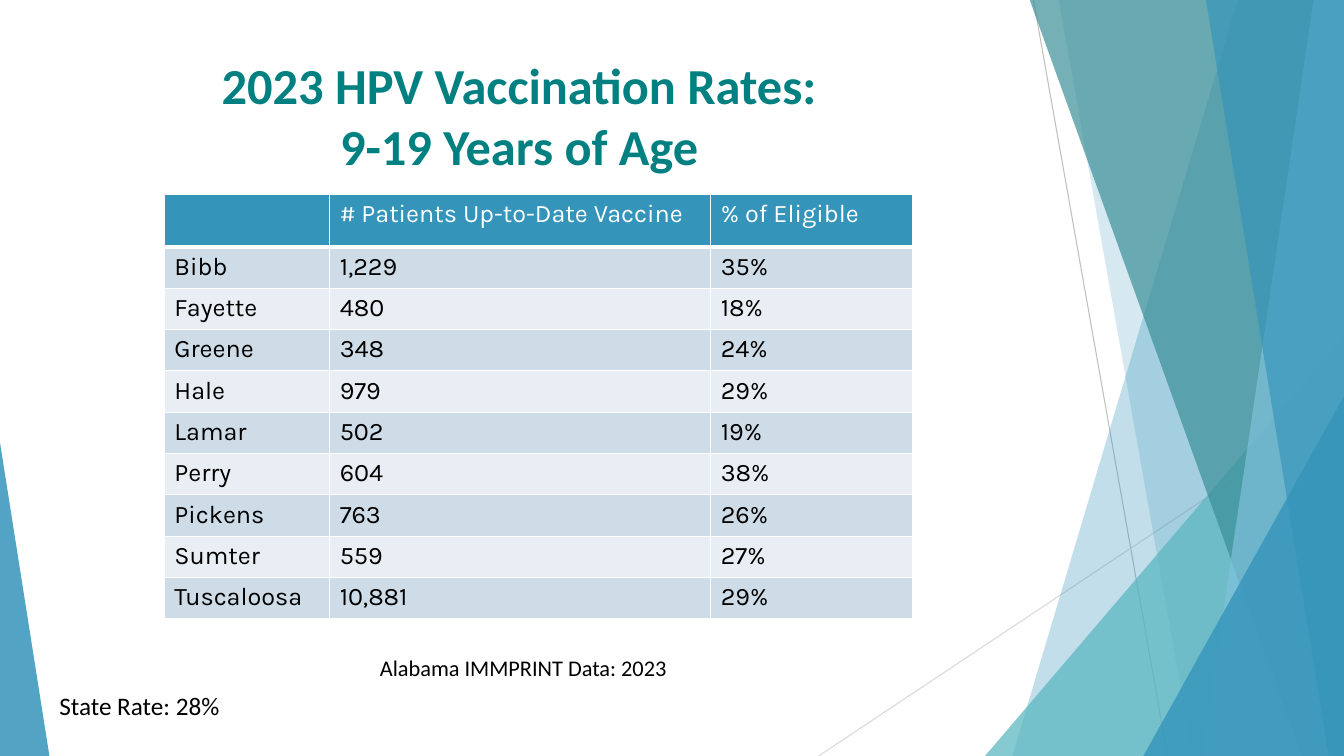
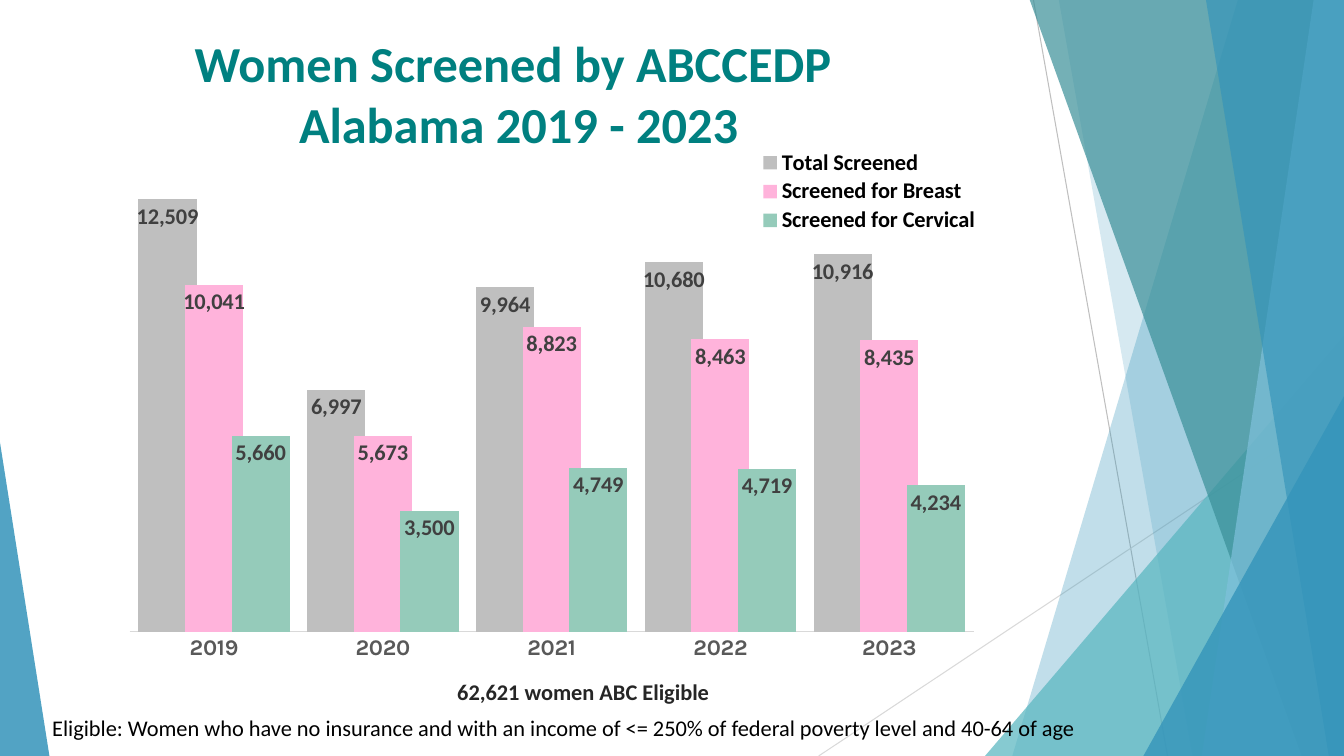
import pptx
import pptx.chart.data
import pptx.dml.color
import pptx.enum.chart
import pptx.enum.shapes
import pptx.enum.text
import pptx.oxml
import pptx.oxml.ns
import pptx.util
from lxml import etree

Inches = pptx.util.Inches
Pt = pptx.util.Pt
qn = pptx.oxml.ns.qn
ALIGN = pptx.enum.text.PP_ALIGN
WIDTH, HEIGHT = 13.33, 7.5
COLORS = {
    "title": "008080", "text": "000000", "strong": "262626", "label": "404040",
    "axis_text": "595959", "axis_line": "D9D9D9", "white": "FFFFFF",
    "blue": "3494BA", "sky": "7FC1DB", "aqua": "58B6C0", "teal": "3A8F98",
    "gray": "BFBFBF", "pink": "FFB3DB", "mint": "95CBBA",
    "band_dark": "CEDCE7", "band_light": "E8EEF3",
}


class Deck:
    """Holds the presentation, its shared style and the current slide."""

    def __init__(self):
        self.presentation = pptx.Presentation()
        self.presentation.slide_width = Inches(WIDTH)
        self.presentation.slide_height = Inches(HEIGHT)
        self.layout = self.presentation.slide_layouts[5]
        self.slide = None
        self.decorated = False

    def color(self, name):
        return pptx.dml.color.RGBColor.from_string(COLORS[name])

    def style(self, font, size, color, bold=False, face="Calibri"):
        font.name, font.size, font.bold = face, Pt(size), bold
        font.color.rgb = self.color(color)

    def new_slide(self, title, top, width):
        self.slide = self.presentation.slides.add_slide(self.layout)
        if not self.decorated:
            self.decorate()
        heading = self.slide.shapes.title
        heading.left, heading.top = Inches(0), Inches(top)
        heading.width, heading.height = Inches(width), Inches(1.44)
        frame = heading.text_frame
        frame.text = title
        frame.auto_size = pptx.enum.text.MSO_AUTO_SIZE.NONE
        frame.vertical_anchor = pptx.enum.text.MSO_ANCHOR.TOP
        for paragraph in frame.paragraphs:
            paragraph.alignment = ALIGN.CENTER
            self.style(paragraph.font, 36, "title", True)

    def decorate(self):
        self.line((10.25, 0), (11.58, HEIGHT), "gray")
        self.line((WIDTH, 4.03), (8.12, HEIGHT), "axis_line")
        self.band(12.28, 10.04, "blue", 30)
        self.band(10.5, 11.83, "blue", 20)
        self.triangle(9.77, 3.33, 3.56, 1, "aqua", 72)
        self.band(10.21, 12.91, "teal", 70)
        self.band(13.03, 11.92, "sky", 70)
        self.band(11.96, 13.18, "blue", 65)
        self.triangle(11.34, 3.93, 1.99, 1, "blue", 80)
        self.triangle(0, 4.39, 0.49, 0, "blue", 85)
        for facet in list(self.slide.shapes):
            if not facet.is_placeholder:
                self.layout.shapes.element.append(facet.element)
        self.decorated = True

    def line(self, start, end, color):
        ends = [Inches(value) for value in (*start, *end)]
        connector = self.slide.shapes.add_connector(
            pptx.enum.shapes.MSO_CONNECTOR.STRAIGHT, *ends)
        connector.line.color.rgb = self.color(color)
        connector.line.width = Pt(0.75)
        etree.SubElement(connector.element.spPr, qn("a:effectLst"))

    def paint(self, shape, color, opacity):
        shape.shadow.inherit = False
        shape.line.fill.background()
        shape.fill.solid()
        shape.fill.fore_color.rgb = self.color(color)
        tint = shape.element.spPr.find(qn("a:solidFill")).find(qn("a:srgbClr"))
        etree.SubElement(tint, qn("a:alpha")).set("val", str(opacity * 1000))

    def band(self, top_x, bottom_x, color, opacity):
        outline = self.slide.shapes.build_freeform(Inches(top_x), Inches(-0.01))
        corners = [(WIDTH, -0.01), (WIDTH, HEIGHT), (bottom_x, HEIGHT)]
        outline.add_line_segments([(Inches(x), Inches(y)) for x, y in corners])
        self.paint(outline.convert_to_shape(), color, opacity)

    def triangle(self, left, top, width, apex, color, opacity):
        shape = self.slide.shapes.add_shape(
            pptx.enum.shapes.MSO_SHAPE.ISOSCELES_TRIANGLE,
            Inches(left), Inches(top), Inches(width), Inches(HEIGHT - top))
        shape.adjustments[0] = apex
        self.paint(shape, color, opacity)

    def note(self, text, box, size=16, color="text", bold=False, align=ALIGN.LEFT):
        frame = self.slide.shapes.add_textbox(*map(Inches, box)).text_frame
        frame.word_wrap = True
        frame.text = text
        paragraph = frame.paragraphs[0]
        paragraph.alignment = align
        self.style(paragraph.font, size, color, bold)

    def cell_borders(self, cell, bottom):
        properties = cell._tc.get_or_add_tcPr()
        for side, width in (("L", 1), ("R", 1), ("T", 1), ("B", bottom)):
            edge = etree.SubElement(properties, qn(f"a:ln{side}"), w=str(Pt(width)))
            fill = etree.SubElement(edge, qn("a:solidFill"))
            etree.SubElement(fill, qn("a:srgbClr"), val=COLORS["white"])

    def table(self, rows, left, top, widths, header_height, row_height):
        height = header_height + row_height * (len(rows) - 1)
        table = self.slide.shapes.add_table(
            len(rows), len(widths), Inches(left), Inches(top),
            Inches(sum(widths)), Inches(height)).table
        for column, width in zip(table.columns, widths):
            column.width = Inches(width)
        for index, values in enumerate(rows):
            header = index == 0
            table.rows[index].height = Inches(header_height if header else row_height)
            band = "blue" if header else ("band_light", "band_dark")[index % 2]
            for cell, value in zip(table.rows[index].cells, values):
                cell.text = value
                self.style(cell.text_frame.paragraphs[0].font, 18,
                           "white" if header else "text", face="Karla")
                self.cell_borders(cell, 3 if header else 1)
                cell.fill.solid()
                cell.fill.fore_color.rgb = self.color(band)

    def manual_layout(self, x, y, width, height, inner=False):
        layout = etree.Element(qn("c:layout"))
        manual = etree.SubElement(layout, qn("c:manualLayout"))
        settings = [("layoutTarget", "inner")] if inner else []
        settings += [("xMode", "edge"), ("yMode", "edge"),
                     ("x", x), ("y", y), ("w", width), ("h", height)]
        for name, value in settings:
            etree.SubElement(manual, qn(f"c:{name}"), val=str(value))
        return layout

    def column_chart(self, categories, series, box):
        data = pptx.chart.data.CategoryChartData(number_format="#,##0")
        data.categories = categories
        for name, values, _ in series:
            data.add_series(name, values)
        chart = self.slide.shapes.add_chart(
            pptx.enum.chart.XL_CHART_TYPE.COLUMN_CLUSTERED,
            *map(Inches, box), data).chart
        self.style(chart.font, 10, "text", face="Karla")
        chart.has_title = False
        plot = chart.plots[0]
        plot.gap_width, plot.overlap = 30, 20
        plot.vary_by_categories = False
        for columns, (_, _, color) in zip(plot.series, series):
            columns.format.fill.solid()
            columns.format.fill.fore_color.rgb = self.color(color)
            labels = columns.data_labels
            labels.show_value = True
            labels.position = pptx.enum.chart.XL_LABEL_POSITION.INSIDE_END
            self.style(labels.font, 16, "label", True)

        years = chart.category_axis
        years.major_tick_mark = pptx.enum.chart.XL_TICK_MARK.NONE
        years.format.line.color.rgb = self.color("axis_line")
        years.format.line.width = Pt(0.75)
        self.style(years.tick_labels.font, 16, "axis_text", True, "Karla")
        counts = chart.value_axis
        counts.visible = counts.has_major_gridlines = False
        counts.minimum_scale, counts.maximum_scale = 0, 14000

        chart.has_legend = True
        legend = chart.legend
        legend.position = pptx.enum.chart.XL_LEGEND_POSITION.RIGHT
        legend.include_in_layout = False
        self.style(legend.font, 16, "text", True)
        self.place(legend._element, "c:legendPos",
                   self.manual_layout(0.73, 0.01, 0.26, 0.16))
        self.place(chart.element.chart.plotArea, None,
                   self.manual_layout(0.01, 0.01, 0.97, 0.88, inner=True))

    def place(self, parent, after, layout):
        for previous in parent.findall(qn("c:layout")):
            parent.remove(previous)
        position = 0 if after is None else parent.index(parent.find(qn(after))) + 1
        parent.insert(position, layout)


def main():
    deck = Deck()

    deck.new_slide("2023 HPV Vaccination Rates:\n9-19 Years of Age", 0.49, 10.3)
    county_rates = [
        ("", "# Patients Up-to-Date Vaccine", "% of Eligible"),
        ("Bibb", "1,229", "35%"),
        ("Fayette", "480", "18%"),
        ("Greene", "348", "24%"),
        ("Hale", "979", "29%"),
        ("Lamar", "502", "19%"),
        ("Perry", "604", "38%"),
        ("Pickens", "763", "26%"),
        ("Sumter", "559", "27%"),
        ("Tuscaloosa", "10,881", "29%"),
    ]
    deck.table(county_rates, 1.63, 1.93, (1.64, 3.78, 2), 0.52, 0.41)
    deck.note("State Rate: 28%", (0.49, 6.8, 1.92, 0.4), size=18)
    deck.note("Alabama IMMPRINT Data: 2023", (3.67, 6.44, 6.63, 0.37))

    deck.new_slide("Women Screened by ABCCEDP\n Alabama 2019 - 2023", 0.27, 10.18)
    screenings = [
        ("Total Screened", (12509, 6997, 9964, 10680, 10916), "gray"),
        ("Screened for Breast", (10041, 5673, 8823, 8463, 8435), "pink"),
        ("Screened for Cervical", (5660, 3500, 4749, 4719, 4234), "mint"),
    ]
    deck.column_chart(("2019", "2020", "2021", "2022", "2023"), screenings,
                      (1.2, 1.41, 8.63, 5.46))
    deck.note("62,621 women ABC Eligible", (3.91, 6.68, 3.75, 0.61),
              color="strong", bold=True, align=ALIGN.CENTER)
    deck.note("Eligible: Women who have no insurance and with an income of "
              "<= 250% of federal poverty level and 40-64 of age",
              (0.42, 7.04, 10.46, 0.37))

    deck.presentation.save("out.pptx")


if __name__ == "__main__":
    main()
